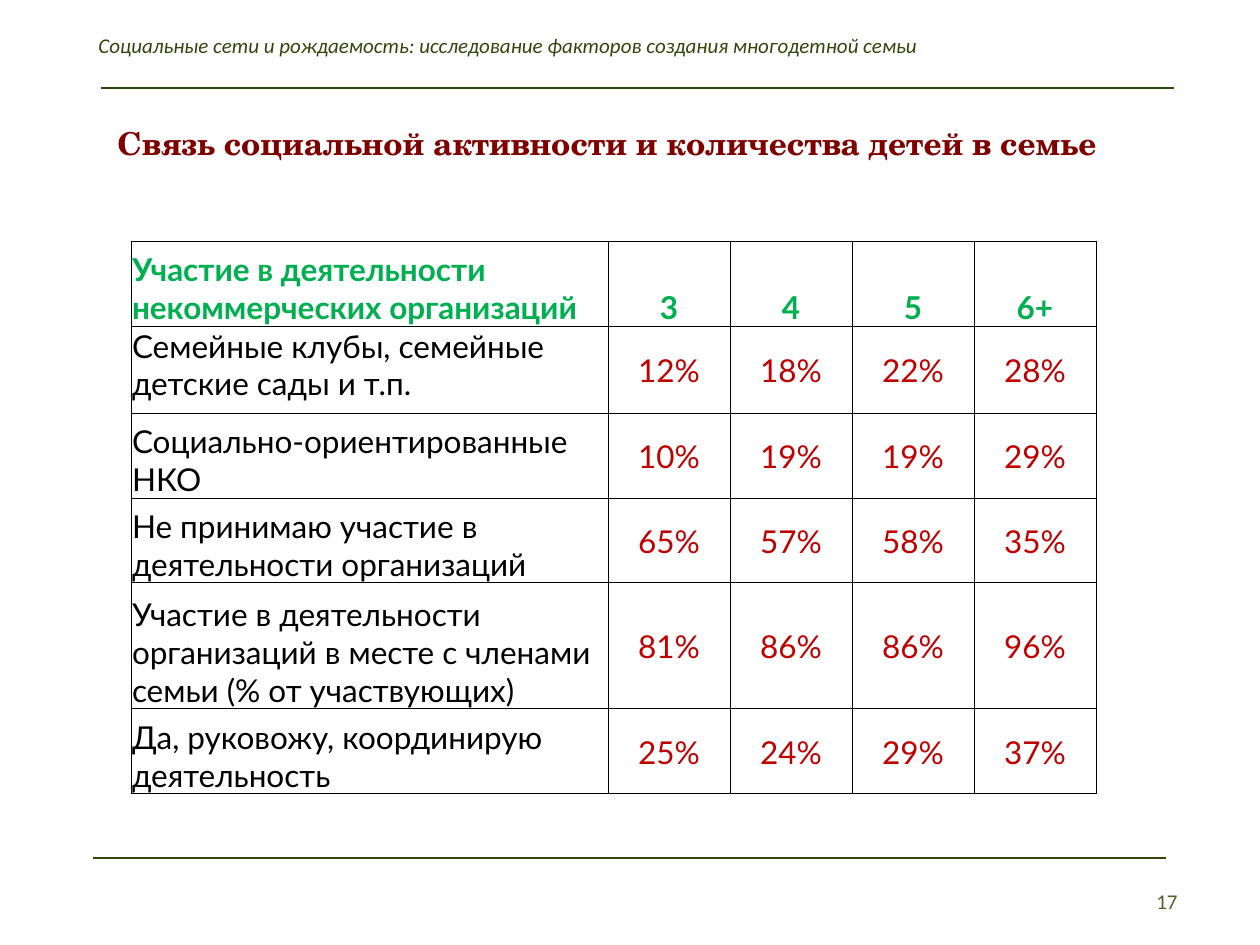
"""Build a slide with a table of social activity by number of children."""
from dataclasses import dataclass

from lxml.etree import SubElement
from pptx import Presentation
from pptx.dml.color import RGBColor
from pptx.enum.shapes import MSO_CONNECTOR
from pptx.enum.text import MSO_ANCHOR, PP_ALIGN
from pptx.oxml.ns import qn
from pptx.util import Pt

EMU_PER_PX = 914400 / 126


@dataclass(frozen=True)
class Theme:
    """Colours, fonts and type sizes of the slide."""
    rule: str = "33460D"
    title: str = "800000"
    number: str = "4F6228"
    head: str = "00B050"
    label: str = "000000"
    value: str = "C00000"
    border: str = "000000"
    body_font: str = "Calibri"
    title_font: str = "TeX Gyre Schola"
    table_font: str = "Lato"
    small: int = 12
    large: int = 18


THEME = Theme()
COLUMNS = [477, 122, 122, 122, 122]
ROWS = [
    (85, ["Участие в деятельности некоммерческих организаций", "3", "4", "5", "6+"]),
    (87, ["Семейные клубы, семейные детские сады и т.п.", "12%", "18%", "22%", "28%"]),
    (85, ["Социально-ориентированные НКО", "10%", "19%", "19%", "29%"]),
    (85, ["Не принимаю участие в деятельности организаций", "65%", "57%", "58%", "35%"]),
    (126, ["Участие в деятельности организаций в месте с членами семьи (% от участвующих)",
           "81%", "86%", "86%", "96%"]),
    (85, ["Да, руковожу, координирую деятельность", "25%", "24%", "29%", "37%"]),
]


def px(n):
    """Turn pixels into EMU."""
    return round(n * EMU_PER_PX)


def style(p, font, size, color, bold=False, italic=False, align=PP_ALIGN.LEFT):
    """Set the font and alignment of a paragraph."""
    p.alignment = align
    p.font.name, p.font.size = font, Pt(size)
    p.font.bold, p.font.italic = bold, italic
    p.font.color.rgb = RGBColor.from_string(color)


def add_text(s, box, text, *font, anchor=MSO_ANCHOR.TOP, **options):
    """Add a text box with one styled paragraph."""
    tf = s.shapes.add_textbox(*map(px, box)).text_frame
    tf.word_wrap = True
    tf.vertical_anchor = anchor
    p = tf.paragraphs[0]
    p.text = text
    style(p, *font, **options)


def add_rule(s, x, y, width):
    """Add a thin horizontal line."""
    line = s.shapes.add_connector(MSO_CONNECTOR.STRAIGHT, px(x), px(y), px(x + width), px(y))
    line.line.color.rgb = RGBColor.from_string(THEME.rule)
    line.line.width = Pt(1)
    SubElement(line._element.spPr, qn("a:effectLst"))


def add_borders(cell):
    """Draw a thin line on each side of a cell."""
    tc_pr = cell._tc.get_or_add_tcPr()
    for i, side in enumerate(("L", "R", "T", "B")):
        ln = tc_pr.makeelement(qn(f"a:ln{side}"), {"w": str(Pt(0.5))})
        fill = SubElement(ln, qn("a:solidFill"))
        SubElement(fill, qn("a:srgbClr"), val=THEME.border)
        tc_pr.insert(i, ln)


def fill_cell(cell, text, row, col):
    """Write and style one cell by its place in the table."""
    cell.fill.background()
    cell.margin_left = cell.margin_right = cell.margin_top = px(1)
    cell.margin_bottom = 0
    if row == 1 and col == 0:
        cell.vertical_anchor = MSO_ANCHOR.TOP
    else:
        cell.vertical_anchor = MSO_ANCHOR.BOTTOM if row == 0 or col == 0 else MSO_ANCHOR.MIDDLE
    color = THEME.head if row == 0 else THEME.value if col else THEME.label
    p = cell.text_frame.paragraphs[0]
    p.text = text
    style(p, THEME.table_font, THEME.large, color, bold=row == 0,
          align=PP_ALIGN.CENTER if col else PP_ALIGN.LEFT)
    add_borders(cell)


def add_activity_table(s, x, y):
    """Add the table of activity shares."""
    height = sum(h for h, _ in ROWS)
    table = s.shapes.add_table(len(ROWS), len(COLUMNS), px(x), px(y),
                               px(sum(COLUMNS)), px(height)).table
    table.first_row = table.horz_banding = False
    for column, width in zip(table.columns, COLUMNS):
        column.width = px(width)
    for i, (row_height, texts) in enumerate(ROWS):
        table.rows[i].height = px(row_height)
        for j, text in enumerate(texts):
            fill_cell(table.cell(i, j), text, i, j)


def main():
    """Build and save the slide."""
    prs = Presentation()
    prs.slide_width, prs.slide_height = px(1260), px(945)
    s = prs.slides.add_slide(prs.slide_layouts[6])
    add_rule(s, 93, 858, 1073)
    add_text(s, (86, 26, 1081, 38),
             "Социальные сети и рождаемость: исследование факторов создания многодетной семьи",
             THEME.body_font, THEME.small, THEME.rule, italic=True)
    add_rule(s, 101, 88, 1073)
    add_text(s, (105, 118, 1013, 50), "Связь социальной активности и количества детей в семье",
             THEME.title_font, THEME.large, THEME.title, bold=True)
    add_text(s, (1123, 876, 67, 50), "17", THEME.body_font, THEME.small, THEME.number,
             anchor=MSO_ANCHOR.MIDDLE, align=PP_ALIGN.RIGHT)
    add_activity_table(s, 131, 241)
    prs.save("out.pptx")


if __name__ == "__main__":
    main()
